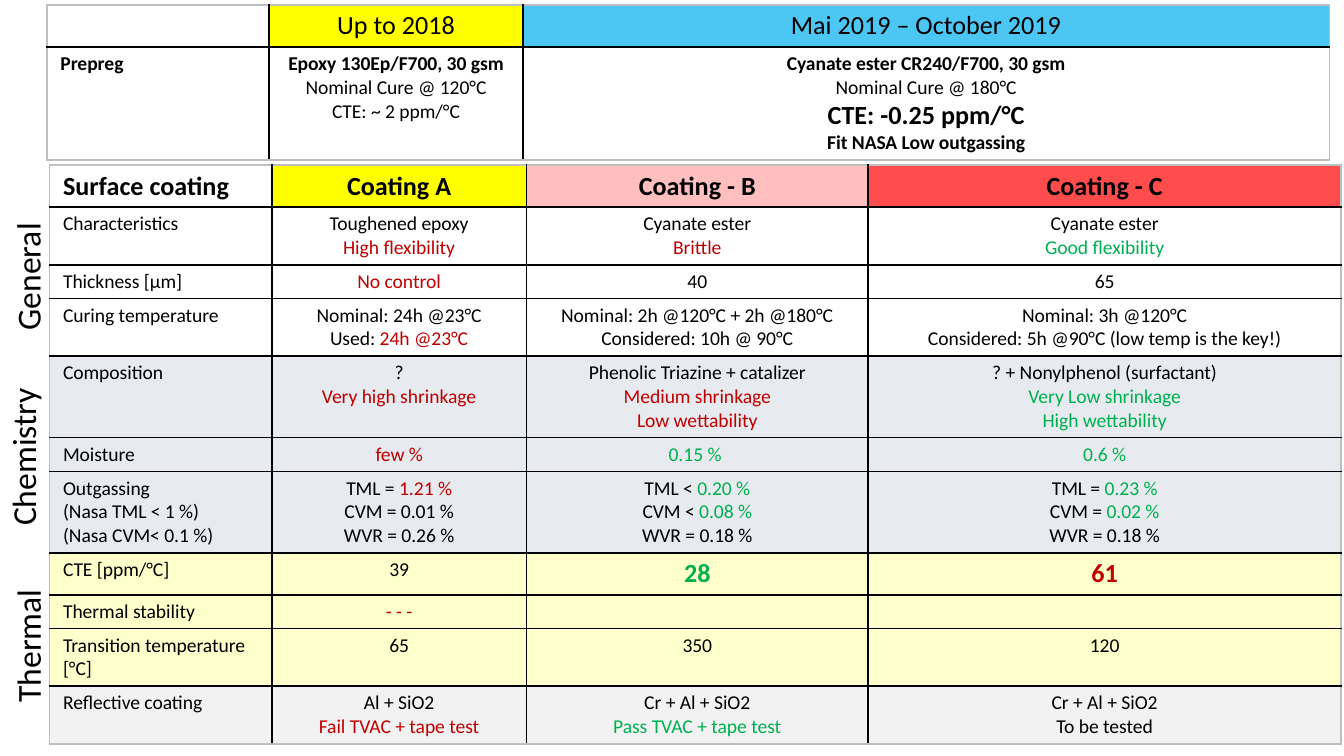
from pptx import Presentation
from pptx import util as u
from pptx.dml import color
from pptx.enum import text
from pptx.oxml.xmlchemy import OxmlElement

BLACK, RED, GREEN = "000000", "C00000", "00B050"
EDGE = "BFBFBF"
BASE = {"name": "Calibri", "size": u.Pt(10.5), "bold": False}
BOLD = {"bold": True}
TITLE = {"size": u.Pt(14)}
LARGE = {**TITLE, **BOLD}
STYLES = {
    "": ({}, BLACK), "r": ({}, RED), "g": ({}, GREEN), "b": (BOLD, BLACK),
    "t": (TITLE, BLACK), "L": (LARGE, BLACK),
    "Lr": (LARGE, RED), "Lg": (LARGE, GREEN),
}
WHITE = ("FFFFFF", 100)
YELLOW = ("FFFF00", 100)
CHEMISTRY, THERMAL = ("17375E", 10), ("FFFF00", 20)
REFLECTIVE = ("F2F2F2", 100)

PREPREG = [
    (22, [WHITE, YELLOW, ("00B0F0", 70)],
     ["", "t^Up to 2018", "t^Mai 2019 – October 2019"]),
    (59.5, [WHITE] * 3,
     ["b^Prepreg",
      "b^Epoxy 130Ep/F700, 30 gsm\nNominal Cure @ 120°C\nCTE: ~ 2 ppm/°C",
      "b^Cyanate ester CR240/F700, 30 gsm\nNominal Cure @ 180°C\n"
      "L^CTE: -0.25 ppm/°C\nb^Fit NASA Low outgassing"]),
]
COATINGS = [
    (22, [None, YELLOW, ("FF0000", 25), ("FF0000", 70)],
     ["L^Surface coating", "L^Coating A", "L^Coating - B", "L^Coating - C"]),
    (30.4, [None] * 4,
     ["Characteristics", "Toughened epoxy\nr^High flexibility",
      "Cyanate ester\nr^Brittle", "Cyanate ester\ng^Good flexibility"]),
    (18, [None] * 4, ["Thickness [µm]", "r^No control", "40", "65"]),
    (30.4, [None] * 4,
     ["Curing temperature", "Nominal: 24h @23°C\nUsed: |r^24h @23°C",
      "Nominal: 2h @120°C + 2h @180°C\nConsidered: 10h @ 90°C",
      "Nominal: 3h @120°C\nConsidered: 5h @90°C (low temp is the key!)"]),
    (43.2, [CHEMISTRY] * 4,
     ["Composition", "?\nr^Very high shrinkage",
      "Phenolic Triazine + catalizer\nr^Medium shrinkage\nr^Low wettability",
      "? + Nonylphenol (surfactant)\ng^Very Low shrinkage\ng^High wettability"]),
    (18, [CHEMISTRY] * 4, ["Moisture", "r^few %", "g^0.15 % ", "g^0.6 %"]),
    (43.2, [CHEMISTRY] * 4,
     ["Outgassing\n(Nasa TML < 1 %)\n(Nasa CVM< 0.1 %)",
      "TML = |r^1.21 %\nCVM = 0.01 %\nWVR = 0.26 %",
      "TML < |g^0.20 %\nCVM < |g^0.08 %\nWVR = 0.18 %",
      "TML = |g^0.23 %\nCVM = |g^0.02 %\nWVR = 0.18 %"]),
    (22, [THERMAL] * 4, ["CTE [ppm/°C]", "39", "Lg^28", "Lr^61"]),
    (18, [THERMAL] * 4, ["Thermal stability", "r^- - -", "", ""]),
    (30.4, [THERMAL] * 4, ["Transition temperature [°C]", "65", "350", "120"]),
    (30.4, [REFLECTIVE] * 4,
     ["Reflective coating", "Al + SiO2\nr^Fail TVAC + tape test",
      "Cr + Al + SiO2\ng^Pass TVAC + tape test", "Cr + Al + SiO2\nTo be tested"]),
]
GROUPS = [("General", -21.6, 133.2, 72.7), ("Chemistry", -32.4, 229.7, 89.3),
          ("Thermal", -23, 331.2, 75.6)]


def rgb(code):
    return color.RGBColor.from_string(code)


def apply(target, values):
    for key, value in values.items():
        setattr(target, key, value)


def add_run(paragraph, words, values, code):
    run = paragraph.add_run()
    run.text = words
    apply(run.font, {**BASE, **values})
    run.font.color.rgb = rgb(code)


def write_cell(cell, content, alignment):
    apply(cell, {"margin_left": u.Pt(7.2), "margin_right": u.Pt(7.2),
                 "margin_top": u.Pt(2.7), "margin_bottom": u.Pt(2.7)})
    frame = cell.text_frame
    for number, line in enumerate(content.split("\n")):
        paragraph = frame.add_paragraph() if number else frame.paragraphs[0]
        paragraph.alignment = alignment
        if not line:
            ending = OxmlElement("a:endParaRPr")
            ending.set("sz", "1050")
            paragraph._p.append(ending)
            continue
        for segment in line.split("|"):
            style, _, words = segment.rpartition("^")
            add_run(paragraph, words, *STYLES[style])


def add_child(parent, tag, **attributes):
    child = OxmlElement(tag)
    for key, value in attributes.items():
        child.set(key, value)
    parent.append(child)
    return child


def draw_borders(cell, outer_sides):
    properties = cell._tc.get_or_add_tcPr()
    for side in "LRTB":
        line = add_child(properties, f"a:ln{side}", w="12700")
        fill = add_child(line, "a:solidFill")
        add_child(fill, "a:srgbClr", val=EDGE if side in outer_sides else BLACK)


def fill_cell(cell, shade):
    if shade is None:
        cell.fill.background()
        return
    code, opacity = shade
    cell.fill.solid()
    cell.fill.fore_color.rgb = rgb(code)
    if opacity < 100:
        tint = cell._tc.tcPr.find(".//{*}solidFill[last()]/{*}srgbClr")
        add_child(tint, "a:alpha", val=str(opacity * 1000))


def add_grid(slide, left, top, widths, rows):
    height = sum(row[0] for row in rows)
    grid = slide.shapes.add_table(len(rows), len(widths), u.Pt(left), u.Pt(top),
                                  u.Pt(sum(widths)), u.Pt(height)).table
    apply(grid, {"first_row": False, "horz_banding": False})
    for column, width in zip(grid.columns, widths):
        column.width = u.Pt(width)
    last_row, last_column = len(rows) - 1, len(widths) - 1
    for r, (row_height, shades, contents) in enumerate(rows):
        grid.rows[r].height = u.Pt(row_height)
        for c, (shade, content) in enumerate(zip(shades, contents)):
            cell = grid.cell(r, c)
            write_cell(cell, content,
                       text.PP_ALIGN.CENTER if c else text.PP_ALIGN.LEFT)
            fill_cell(cell, shade)
            fill = list(cell._tc.tcPr)
            outer = {"L": c == 0, "R": c == last_column,
                     "T": r == 0, "B": r == last_row}
            draw_borders(cell, [side for side in outer if outer[side]])
            cell._tc.tcPr.extend(fill)


def add_group_label(slide, words, left, top, width):
    label = slide.shapes.add_textbox(u.Pt(left), u.Pt(top), u.Pt(width), u.Pt(29))
    label.rotation = 270
    apply(label.text_frame, {"word_wrap": False,
                             "auto_size": text.MSO_AUTO_SIZE.SHAPE_TO_FIT_TEXT})
    add_run(label.text_frame.paragraphs[0], words, {"size": u.Pt(18)}, BLACK)


def main():
    deck = Presentation()
    apply(deck, {"slide_width": u.Pt(720), "slide_height": u.Pt(405)})
    slide = deck.slides.add_slide(deck.slide_layouts[6])
    add_grid(slide, 26.6, 88.5, [119, 136.5, 183, 253.5], COATINGS)
    add_grid(slide, 25.2, 2.7, [119, 136, 432], PREPREG)
    for group in GROUPS:
        add_group_label(slide, *group)
    deck.save("out.pptx")


if __name__ == "__main__":
    main()
